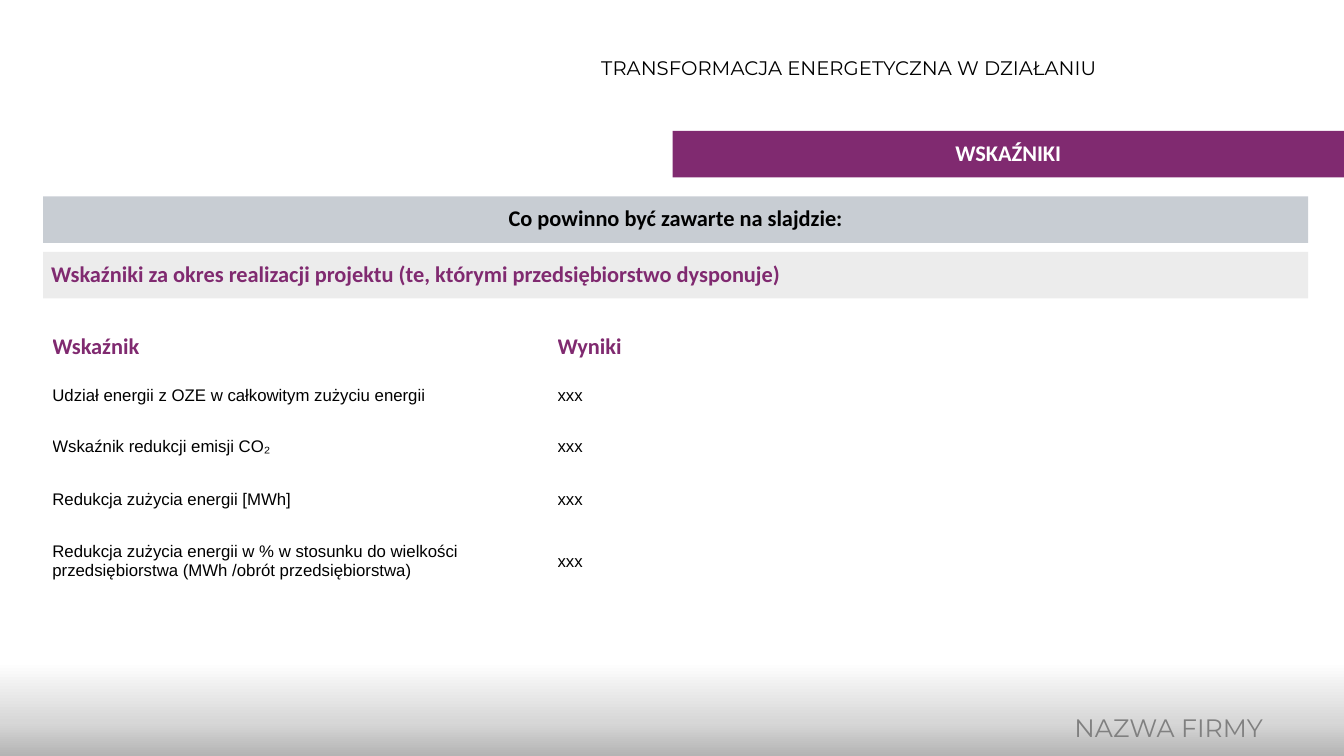
from copy import deepcopy

from lxml import etree
from pptx import Presentation
from pptx.dml.color import RGBColor
from pptx.enum.shapes import MSO_SHAPE
from pptx.enum.text import MSO_ANCHOR, PP_ALIGN
from pptx.oxml.ns import qn
from pptx.util import Cm, Pt

RECTANGLE = MSO_SHAPE.RECTANGLE
LEFT, CENTER, RIGHT = PP_ALIGN.LEFT, PP_ALIGN.CENTER, PP_ALIGN.RIGHT
TOP, MIDDLE = MSO_ANCHOR.TOP, MSO_ANCHOR.MIDDLE

COLORS = {
    "purple": "802A70",
    "slate": "44546A",
    "silver": "BFBFBF",
    "gray": "808080",
    "black": "000000",
    "white": "FFFFFF",
}
FOOTER_STOPS = [(0, "979797"), (0.5, "D7D7D7"), (1, "FFFFFF")]
HEADING = {"name": "Calibri", "size": Pt(16), "bold": True}
BODY = {"name": "Arial", "size": Pt(12), "bold": False}


def write(frame, text, font, color, align=LEFT, line_spacing=None):
    paragraph = frame.paragraphs[0]
    paragraph.alignment = align
    paragraph.line_spacing = line_spacing
    run = paragraph.add_run()
    run.text = text
    for attribute, value in font.items():
        setattr(run.font, attribute, value)
    run.font.color.rgb = RGBColor.from_string(COLORS[color])


def add_bar(left, top, width, height):
    """Add a rectangle without outline or shadow."""
    bar = slide.shapes.add_shape(RECTANGLE, Cm(left), Cm(top), Cm(width), Cm(height))
    bar.shadow.inherit = False
    bar.line.fill.background()
    return bar


prs = Presentation()
prs.slide_width, prs.slide_height = Cm(33.87), Cm(19.05)
slide = prs.slides.add_slide(prs.slide_layouts[6])

# Footer fading upwards from gray to white
footer = add_bar(0, 16.69, 33.87, 3.02)
footer.fill.gradient()
footer.fill.gradient_angle = 90
stop_list = footer._element.spPr.find(qn("a:gradFill")).find(qn("a:gsLst"))
stop_list.append(deepcopy(stop_list[0]))
for stop, (position, color) in zip(footer.fill.gradient_stops, FOOTER_STOPS):
    stop.position = position
    stop.color.rgb = RGBColor.from_string(color)

# Company name and presentation title
captions = [
    ("NAZWA FIRMY", 24.43, 17.55, 7.65, 1.68, 18, "gray", RIGHT, 0.9),
    ("TRANSFORMACJA ENERGETYCZNA W DZIAŁANIU", 14.78, 0.76, 13.23, 1.7, 14, "black", CENTER, 1.3),
]
for text, left, top, width, height, size, color, align, spacing in captions:
    caption = slide.shapes.add_textbox(Cm(left), Cm(top), Cm(width), Cm(height))
    caption.text_frame.word_wrap = True
    caption.text_frame.vertical_anchor = MIDDLE
    font = {"name": "Montserrat", "size": Pt(size)}
    write(caption.text_frame, text, font, color, align, spacing)

# Heading bars: text, left, top, width, fill, opacity in %, text colour, alignment
headings = [
    ("Co powinno być zawarte na slajdzie:", 1.09, 4.95, 31.88, "slate", 29, "black", CENTER),
    ("Wskaźniki za okres realizacji projektu (te, którymi przedsiębiorstwo dysponuje)",
     1.09, 6.35, 31.88, "silver", 29, "purple", LEFT),
    ("WSKAŹNIKI", 16.95, 3.3, 16.92, "purple", 100, "white", CENTER),
]
for text, left, top, width, fill, opacity, color, align in headings:
    bar = add_bar(left, top, width, 1.17)
    bar.fill.solid()
    bar.fill.fore_color.rgb = RGBColor.from_string(COLORS[fill])
    if opacity < 100:
        fill_color = bar._element.spPr.find(qn("a:solidFill"))[0]
        etree.SubElement(fill_color, qn("a:alpha")).set("val", str(opacity * 1000))
    frame = bar.text_frame
    frame.word_wrap = True
    frame.vertical_anchor = TOP
    for side in ("left", "right", "top", "bottom"):
        setattr(frame, f"margin_{side}", Cm(0.2))
    write(frame, text, HEADING, color, align)

# Indicators and their results
indicators = [
    ("Wskaźnik", "Wyniki"),
    ("Udział energii z OZE w całkowitym zużyciu energii", "xxx"),
    ("Wskaźnik redukcji emisji CO₂", "xxx"),
    ("Redukcja zużycia energii [MWh]", "xxx"),
    ("Redukcja zużycia energii w % w stosunku do wielkości "
     "przedsiębiorstwa (MWh /obrót przedsiębiorstwa)", "xxx"),
]
row_heights = [1.22, 1.22, 1.37, 1.3, 1.8]
column_widths = [12.73, 9.73]
table = slide.shapes.add_table(
    len(indicators), len(column_widths), Cm(1.32), Cm(8.13),
    Cm(sum(column_widths)), Cm(sum(row_heights)),
).table
table.first_row = True
table.horz_banding = False
for column, width in zip(table.columns, column_widths):
    column.width = Cm(width)
for row, height, texts in zip(table.rows, row_heights, indicators):
    row.height = Cm(height)
    is_header = texts is indicators[0]
    for cell, text in zip(row.cells, texts):
        cell.fill.background()
        cell.vertical_anchor = MIDDLE
        cell.margin_left = cell.margin_top = cell.margin_bottom = 0
        cell.margin_right = Cm(2.44)
        write(cell.text_frame, text, HEADING if is_header else BODY,
              "purple" if is_header else "black")

prs.save("out.pptx")
